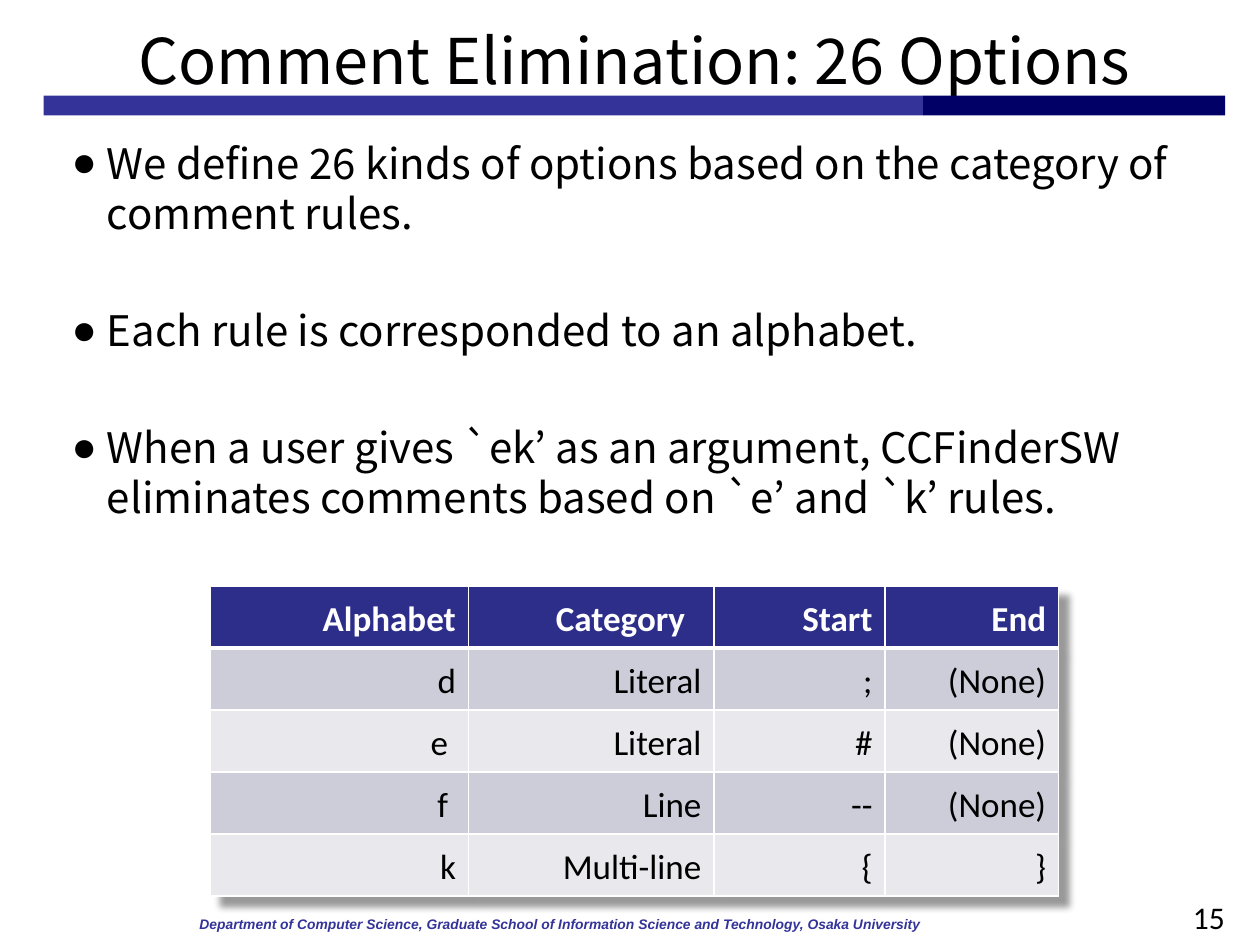
from lxml.etree import SubElement
from pptx import Presentation
from pptx.dml.color import RGBColor
from pptx.enum.shapes import MSO_SHAPE
from pptx.enum.text import MSO_ANCHOR, MSO_AUTO_SIZE, PP_ALIGN
from pptx.oxml import parse_xml
from pptx.oxml.ns import nsdecls, qn
from pptx.util import Cm, Pt

HEADING_FONT = "Noto Sans CJK JP"
TABLE_FONT = "Calibri"
BLACK, WHITE, INDIGO, NAVY = "000000", "FFFFFF", "333399", "000066"
HEADER_FILL = "2D2D8A"
BAND_FILLS = ("E8E8ED", "CDCDDA")

POINTS = (
    "We define 26 kinds of options based on the category of comment rules.",
    "Each rule is corresponded to an alphabet.",
    "When a user gives `ek’ as an argument, CCFinderSW eliminates comments "
    "based on `e’ and `k’ rules.",
)
RULES = (
    ("Alphabet", "Category", "Start", "End"),
    ("d", "Literal", ";", "(None)"),
    ("e ", "Literal", "#", "(None)"),
    ("f ", "Line", "--", "(None)"),
    ("k", "Multi-line", "{", "}"),
)
COLUMN_WIDTHS = (5.2, 4.95, 3.45, 3.5)
ROW_HEIGHT = 1.25


def color(hex_value):
    return RGBColor.from_string(hex_value)


def place(shape, left, top, width, height):
    shape.left, shape.top = Cm(left), Cm(top)
    shape.width, shape.height = Cm(width), Cm(height)


def style(paragraph, name, size, hex_value, bold=False, italic=False):
    font = paragraph.font
    font.name, font.size = name, Pt(size)
    font.bold, font.italic = bold, italic
    font.color.rgb = color(hex_value)


def add_bar(slide, left, width, fill):
    bar = slide.shapes.add_shape(
        MSO_SHAPE.RECTANGLE, Cm(left), Cm(1.93), Cm(width), Cm(0.4))
    bar.shadow.inherit = False
    bar.fill.solid()
    bar.fill.fore_color.rgb = color(fill)
    bar.line.fill.background()


def add_label(slide, text, box, alignment, **font):
    label = slide.shapes.add_textbox(*map(Cm, box))
    frame = label.text_frame
    frame.word_wrap = True
    paragraph = frame.paragraphs[0]
    paragraph.text = text
    paragraph.alignment = alignment
    style(paragraph, **font)
    return frame


def fill_title(title):
    place(title, 0.88, 0.33, 23.82, 1.6)
    frame = title.text_frame
    frame.text = "Comment Elimination: 26 Options"
    frame.auto_size = MSO_AUTO_SIZE.NONE
    frame.vertical_anchor = MSO_ANCHOR.MIDDLE
    frame.margin_bottom = 0
    paragraph = frame.paragraphs[0]
    paragraph.alignment = PP_ALIGN.CENTER
    style(paragraph, HEADING_FONT, 36, BLACK)


def add_bullet(paragraph):
    properties = paragraph._p.get_or_add_pPr()
    properties.set("marL", str(Cm(0.71)))
    properties.set("indent", str(-Cm(0.71)))
    SubElement(properties, qn("a:buChar")).set("char", "●")


def fill_body(body):
    place(body, 1.19, 2.64, 23.22, 11.5)
    frame = body.text_frame
    frame.text = "\n".join(POINTS)
    frame.auto_size = MSO_AUTO_SIZE.NONE
    for index, paragraph in enumerate(frame.paragraphs):
        add_bullet(paragraph)
        paragraph.line_spacing = 1.0
        paragraph.space_before = Pt(38 if index else 0)
        style(paragraph, HEADING_FONT, 24, BLACK)


def fill_cell(cell, text, fill, text_color, bold):
    cell.fill.solid()
    cell.fill.fore_color.rgb = color(fill)
    cell.margin_left = cell.margin_right = cell.margin_top = Cm(0.25)
    cell.margin_bottom = Cm(0.13)
    paragraph = cell.text_frame.paragraphs[0]
    paragraph.text = text
    paragraph.alignment = PP_ALIGN.RIGHT
    style(paragraph, TABLE_FONT, 20, text_color, bold)


def add_bottom_border(cell):
    cell._tc.get_or_add_tcPr().insert(0, parse_xml(
        f'<a:lnB {nsdecls("a")} w="{Pt(3)}"><a:solidFill>'
        f'<a:srgbClr val="{WHITE}"/></a:solidFill></a:lnB>'))


def add_table_shadow(table):
    table._tbl.tblPr.insert(0, parse_xml(
        f'<a:effectLst {nsdecls("a")}>'
        f'<a:outerShdw blurRad="{Cm(0.14)}" dist="{Cm(0.28)}" dir="2700000" '
        'algn="tl" rotWithShape="0"><a:srgbClr val="000000">'
        '<a:alpha val="40000"/></a:srgbClr></a:outerShdw></a:effectLst>'))


def add_rule_table(slide):
    table = slide.shapes.add_table(
        len(RULES), len(COLUMN_WIDTHS), Cm(4.24), Cm(11.81),
        Cm(sum(COLUMN_WIDTHS)), Cm(ROW_HEIGHT * len(RULES))).table
    for column, width in zip(table.columns, COLUMN_WIDTHS):
        column.width = Cm(width)
    for row_index, rule in enumerate(RULES):
        is_header = row_index == 0
        fill = HEADER_FILL if is_header else BAND_FILLS[row_index % 2]
        for column_index, text in enumerate(rule):
            cell = table.cell(row_index, column_index)
            fill_cell(cell, text, fill,
                      WHITE if is_header else BLACK, is_header)
            if is_header:
                add_bottom_border(cell)
    table.cell(0, 1).margin_right = Cm(0.58)
    add_table_shadow(table)


def main():
    deck = Presentation()
    deck.slide_width, deck.slide_height = Cm(25.4), Cm(19.05)
    slide = deck.slides.add_slide(deck.slide_layouts[1])
    add_bar(slide, 0.88, 17.73, INDIGO)
    add_bar(slide, 18.61, 6.09, NAVY)
    fill_title(slide.shapes.title)
    fill_body(slide.placeholders[1])
    footer = add_label(
        slide,
        "Department of Computer Science, Graduate School of Information "
        "Science and Technology, Osaka University",
        (3.84, 18.36, 19.1, 0.61), PP_ALIGN.LEFT,
        name="Arial", size=7.9, hex_value=INDIGO, bold=True, italic=True)
    footer.margin_left = footer.margin_right = Cm(0.18)
    footer.margin_top = footer.margin_bottom = Cm(0.1)
    add_label(slide, "15", (23.34, 17.98, 1.6, 0.74), PP_ALIGN.RIGHT,
              name=TABLE_FONT, size=18, hex_value=BLACK)
    add_rule_table(slide)
    deck.save("out.pptx")


if __name__ == "__main__":
    main()
